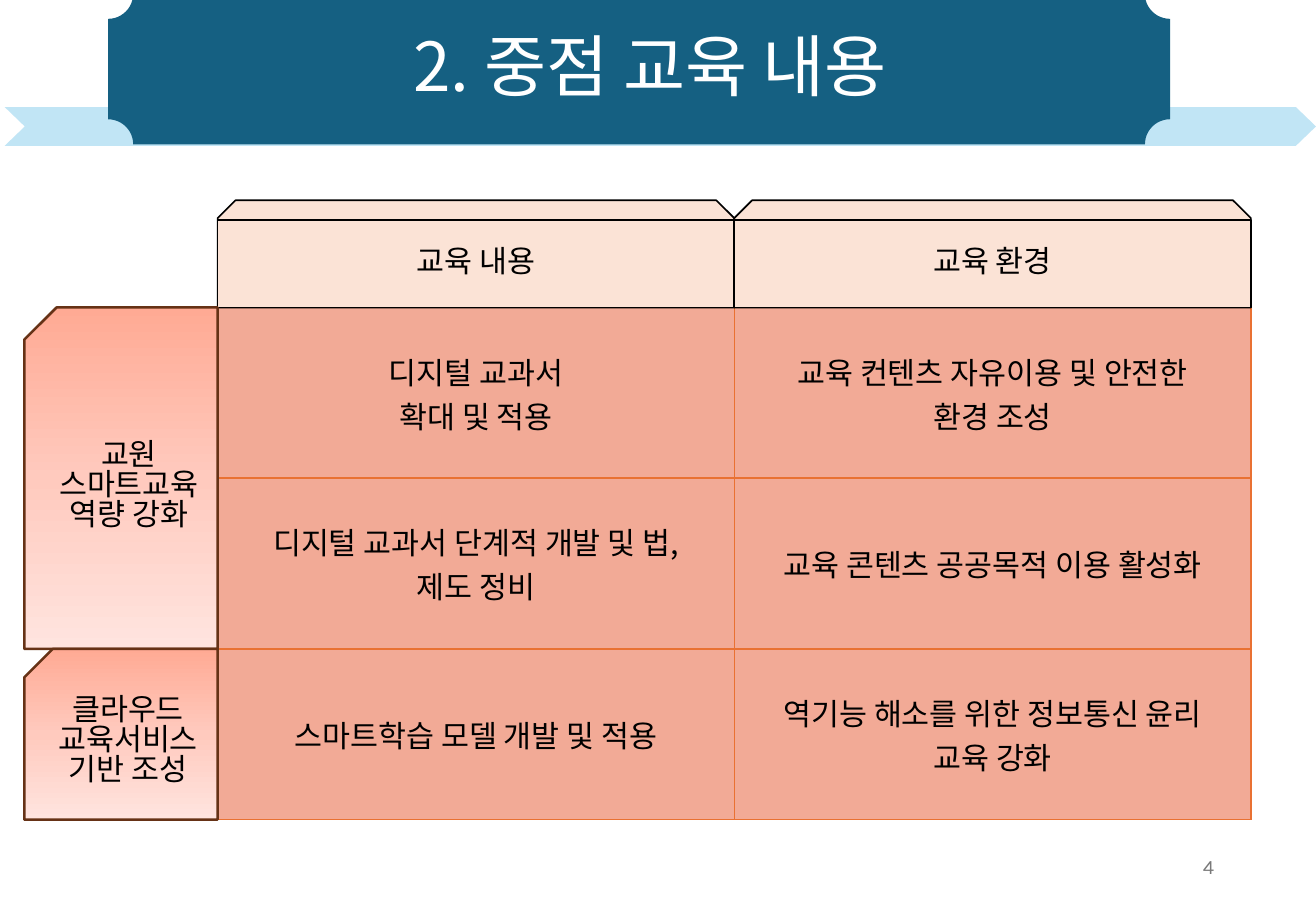
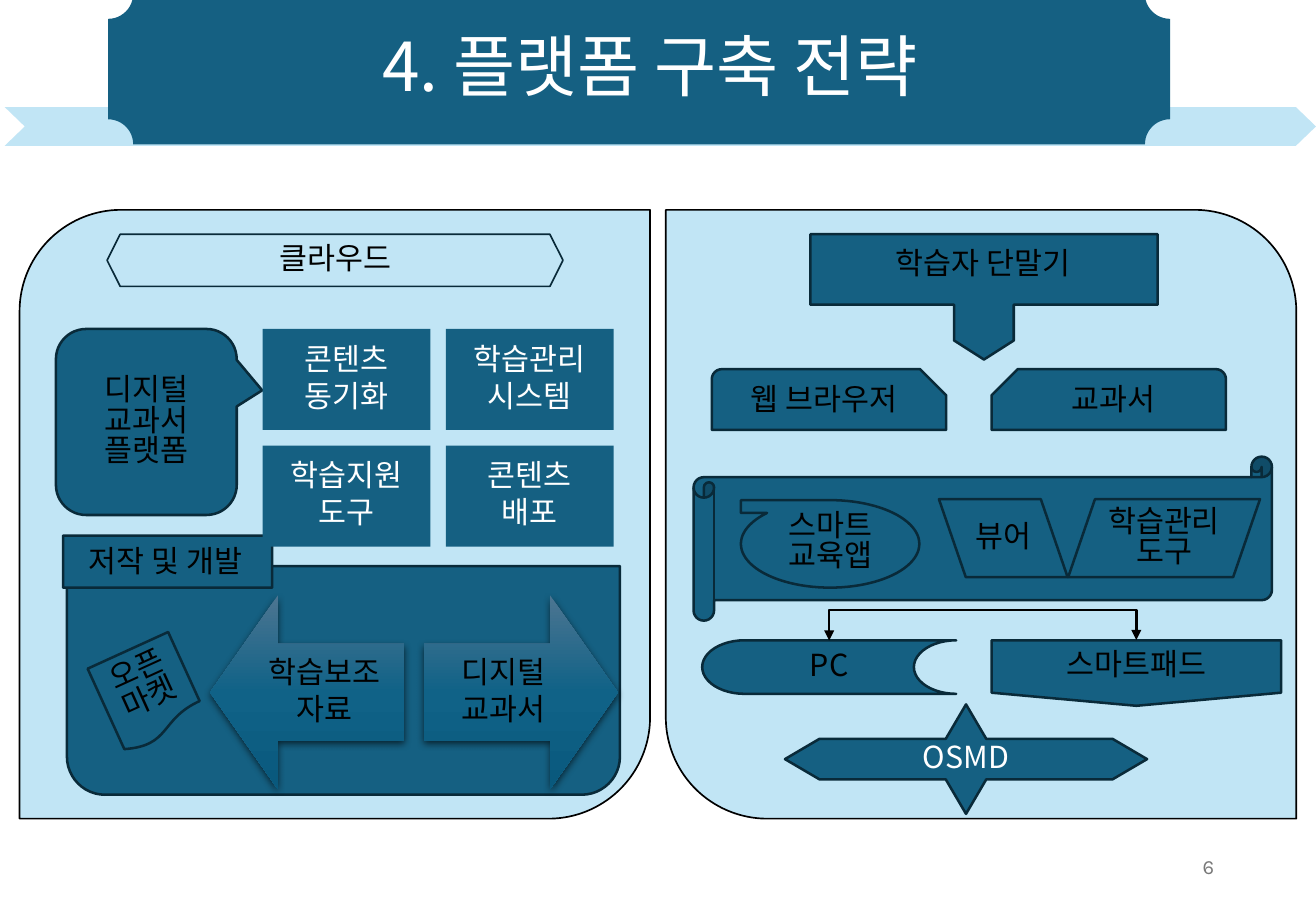
from copy import deepcopy

from lxml import etree
from pptx import Presentation
from pptx.dml.color import RGBColor
from pptx.enum import shapes, text
from pptx.oxml.ns import qn
from pptx.util import Cm, Pt

NAVY = RGBColor(0x15, 0x60, 0x82)
SKY = RGBColor(0xC1, 0xE5, 0xF5)
EDGE = RGBColor(0x09, 0x2A, 0x39)
WHITE = RGBColor(0xFF, 0xFF, 0xFF)
BLACK = RGBColor(0x00, 0x00, 0x00)
GREY = RGBColor(0x79, 0x79, 0x79)
PEACH = RGBColor(0xFB, 0xE3, 0xD6)
CORAL = RGBColor(0xF2, 0xAA, 0x96)
BROWN = RGBColor(0x66, 0x32, 0x16)
ORANGE = RGBColor(0xE9, 0x71, 0x32)
BLUSH = [RGBColor.from_string(c) for c in ("FFAA94", "FFCABE", "FFE4DF")]
STEEL = [RGBColor.from_string(c) for c in ("4C7591", "106287", "09597D")]
KIND = shapes.MSO_SHAPE
MID = text.MSO_ANCHOR.MIDDLE
TOP = text.MSO_ANCHOR.TOP
ALIGN = text.PP_ALIGN


def add(node, tag, **attrs):
    return etree.SubElement(node, qn(tag), attrs)


class Deck:
    font = "Noto Sans CJK KR"
    size = 18
    pitch = 0.83

    def __init__(self):
        self.prs = Presentation()
        self.prs.slide_width, self.prs.slide_height = Cm(27.51), Cm(19.05)
        self.base = self.prs.slide_layouts[5]
        self.slide = self.on = None

    def page(self, title, num):
        first = self.slide is None
        self.slide = self.prs.slides.add_slide(self.base)
        self.on = self.slide.shapes
        if first:
            self.bands()
        head = self.on.title
        self.place(head, 1.73, -0.38, 23.72, 3.68)
        self.letter(head.text_frame, title, WHITE, size=40, pitch=0.9)
        self.label(num, 19.43, 17.65, 6.2, 1.02, GREY, size=12,
                   font="Karla", align=ALIGN.RIGHT, anchor=MID)

    def bands(self):
        strip = self.shape(KIND.NOTCHED_RIGHT_ARROW, 0.1, 2.24, 27.41, 0.81,
                           SKY, adj=(1, 0.518))
        plate = self.shape(KIND.PLAQUE, 2.26, -0.13, 22.2, 3.15)
        tree = self.base.shapes.element
        for spot, band in enumerate((strip, plate), 2):
            tree.insert(spot, band.element)

    def group(self):
        self.on = self.slide.shapes.add_group_shape().shapes

    def place(self, item, x, y, w, h):
        item.left, item.top, item.width, item.height = map(Cm, (x, y, w, h))

    def letter(self, frame, words, color=BLACK, size=size, font=font,
               align=ALIGN.CENTER, anchor=MID, pitch=pitch, after=0,
               inset=None, wrap=True):
        frame.text = words
        frame.word_wrap = wrap
        frame.vertical_anchor = anchor
        if inset is not None:
            frame.margin_left = frame.margin_right = Cm(inset)
            frame.margin_top = frame.margin_bottom = Cm(inset)
        self.style(frame, color, size, font, align, pitch, after)

    def style(self, frame, color, size, font, align, pitch, after=0):
        for para in frame.paragraphs:
            para.alignment = align
            para.line_spacing = pitch
            para.space_after = Pt(after)
            for run in para.runs:
                run.font.size = Pt(size)
                run.font.name = font
                run.font.color.rgb = color
                add(run.font._element, "a:ea", typeface=font)

    def label(self, words, x, y, w, h, color=BLACK, anchor=TOP, **look):
        box = self.on.add_textbox(Cm(x), Cm(y), Cm(w), Cm(h))
        self.letter(box.text_frame, words, color, anchor=anchor, **look)

    def shape(self, kind, x, y, w, h, fill=NAVY, line=None, wide=1.5,
              words="", adj=(), flip="", turn=0, **look):
        item = self.on.add_shape(kind, Cm(x), Cm(y), Cm(w), Cm(h))
        item.shadow.inherit = False
        for i, value in enumerate(adj):
            item.adjustments[i] = value
        for way in flip:
            item.element.spPr.xfrm.set("flip" + way, "1")
        item.rotation = turn
        if isinstance(fill, list):
            self.blend(item.fill, fill)
        else:
            item.fill.solid()
            item.fill.fore_color.rgb = fill
        if line is None:
            item.line.fill.background()
        else:
            item.line.color.rgb = line
            item.line.width = Pt(wide)
        if words:
            self.letter(item.text_frame, words, **look)
        return item

    def edged(self, kind, *at, **more):
        return self.shape(kind, *at, line=EDGE, **more)

    def blend(self, fill, tones):
        fill.gradient()
        fill.gradient_angle = 270
        first = fill.gradient_stops[0]._gs
        first.addnext(deepcopy(first))
        for i, (stop, tone) in enumerate(zip(fill.gradient_stops, tones)):
            stop.position = i / 2
            stop.color.rgb = tone

    def shade(self, item):
        glow = add(item.element.spPr.find(qn("a:effectLst")), "a:outerShdw",
                   blurRad="57150", dist="19050", dir="5400000",
                   algn="ctr", rotWithShape="0")
        add(add(glow, "a:srgbClr", val="000000"), "a:alpha", val="63000")

    def table(self, rows, x, y, w, h):
        wide, high = len(rows[0]), len(rows)
        grid = self.on.add_table(high, wide, Cm(x), Cm(y),
                                 Cm(w * wide), Cm(h * high)).table
        grid.first_row = grid.horz_banding = False
        for r, row in enumerate(rows):
            grid.rows[r].height = Cm(h)
            for c, words in enumerate(row):
                grid.columns[c].width = Cm(w)
                cell = grid.cell(r, c)
                cell.text_frame.text = words
                cell.vertical_anchor = MID
                self.style(cell.text_frame, BLACK, self.size, self.font,
                           ALIGN.CENTER, 1.0)
                self.rule(cell)
                cell.fill.solid()
                cell.fill.fore_color.rgb = CORAL

    def rule(self, cell):
        props = cell._tc.get_or_add_tcPr()
        for side in "LRTB":
            edge = add(props, "a:ln" + side, w="12700")
            add(add(edge, "a:solidFill"), "a:srgbClr", val=str(ORANGE))

    def bridge(self, start, end, rise):
        link = self.on.add_connector(shapes.MSO_CONNECTOR.ELBOW, start.left,
                                     start.top, end.left, end.top)
        link.begin_connect(start, 0)
        link.end_connect(end, 0)
        a = start.left + start.width // 2
        b = end.left + end.width // 2
        thin = Cm(0.01)
        link.left, link.top = (a + b - thin) // 2, start.top - (b - a) // 2
        link.width, link.height = thin, b - a
        props = link._element.spPr
        for key, value in (("rot", "5400000"), ("flipH", "1"), ("flipV", "1")):
            props.xfrm.set(key, value)
        bend = round(Cm(rise) / thin * 100000)
        add(props.find(".//" + qn("a:avLst")), "a:gd", name="adj1",
            fmla=f"val {bend}")
        link.line.color.rgb = BLACK
        link.line.width = Pt(1.5)
        for tip in ("a:headEnd", "a:tailEnd"):
            add(link.line._get_or_add_ln(), tip, type="triangle")
        add(props, "a:effectLst")


def focus(deck):
    deck.page("2. 중점 교육 내용", "4")
    x, y, w, h = 4.55, 6.43, 10.8, 3.57
    deck.table([
        ("디지털 교과서\n확대 및 적용", "교육 컨텐츠 자유이용 및 안전한\n환경 조성"),
        ("디지털 교과서 단계적 개발 및 법,\n제도 정비", "교육 콘텐츠 공공목적 이용 활성화"),
        ("스마트학습 모델 개발 및 적용", "역기능 해소를 위한 정보통신 윤리\n교육 강화"),
    ], x, y, w, h)
    for i, words in enumerate(("교육 내용", "교육 환경")):
        left = x + i * w
        deck.shape(KIND.SNIP_2_SAME_RECTANGLE, left, y - 2.24, w, 2.24,
                   PEACH, BLACK, 1)
        deck.shape(KIND.RECTANGLE, left, y - 1.83, w, 1.83,
                   PEACH, BLACK, 1, words)
    for row, span, words in ((0, 2, "교원\n스마트교육\n역량 강화"),
                             (2, 1, "클라우드\n교육서비스\n기반 조성")):
        deck.shape(KIND.SNIP_1_RECTANGLE, 0.51, y + row * h, x - 0.51,
                   span * h, BLUSH, BROWN, words=words, flip="H")


def cloud(deck):
    deck.group()
    deck.shape(KIND.ROUND_2_DIAG_RECTANGLE, 0.41, 4.39, 13.18, 12.73,
               SKY, BLACK, 1)
    deck.edged(KIND.HEXAGON, 2.24, 4.9, 9.53, 1.09, fill=SKY, wide=1,
               words="클라우드")
    deck.edged(KIND.ROUNDED_RECTANGULAR_CALLOUT, 1.17, 6.88, 3.78, 3.89,
               adj=(0.641, -0.17, 0.167), words="디지털\n교과서\n플랫폼")
    deck.edged(KIND.ROUND_2_SAME_RECTANGLE, 1.4, 11.84, 11.56, 4.78, flip="V")
    deck.edged(KIND.SNIP_1_RECTANGLE, 1.32, 11.2, 4.37, 1.09,
               words="저작 및 개발")
    deck.edged(KIND.FLOWCHART_DOCUMENT, 2.16, 13.51, 1.85, 1.98, turn=335.5,
               words="오픈\n마켓")
    for kind, x, words in ((KIND.LEFT_ARROW, 4.39, "학습보조\n자료"),
                           (KIND.RIGHT_ARROW, 8.86, "디지털\n교과서")):
        deck.shade(deck.shape(kind, x, 12.45, 4.06, 4.06, STEEL, words=words,
                              adj=(0.5, 0.35), inset=0.36, after=4))
    tiles = ("콘텐츠\n동기화", "학습관리\n시스템", "학습지원\n도구", "콘텐츠\n배포")
    for i, words in enumerate(tiles):
        row, col = divmod(i, 2)
        deck.shape(KIND.RECTANGLE, 5.49 + col * 3.83, 6.88 + row * 2.44,
                   3.51, 2.11, words=words, color=WHITE, inset=0.18, after=4)


def device(deck):
    deck.group()
    deck.shape(KIND.ROUND_2_DIAG_RECTANGLE, 13.92, 4.39, 13.18, 12.73,
               SKY, BLACK, 1, flip="H")
    deck.edged(KIND.UP_ARROW_CALLOUT, 16.94, 4.9, 7.26, 2.62, flip="V",
               adj=(0.5, 0.238, 0.152, 0.562))
    deck.label("학습자 단말기", 17.58, 5.11, 5.94, 1.8)
    for x, flip, words in ((14.88, "", "웹 브라우저"), (20.73, "H", "교과서")):
        deck.edged(KIND.SNIP_ROUND_RECTANGLE, x, 7.72, 4.9, 1.27, flip=flip,
                   adj=(0.167, 0.431), words=words)
    deck.edged(KIND.HORIZONTAL_SCROLL, 14.5, 9.55, 12.09, 3.43)
    deck.edged(KIND.FLOWCHART_SEQUENTIAL_ACCESS_STORAGE, 15.49, 10.46, 3.73,
               1.83, flip="HV")
    deck.label("스마트\n교육앱", 15.8, 10.59, 3.12, 1.8)
    for x, w, flip, words in ((22.33, 4.01, "", "학습관리\n도구"),
                              (19.63, 2.69, "H", "뷰어")):
        deck.edged(KIND.PARALLELOGRAM, x, 10.44, w, 1.63, flip=flip,
                   adj=(0.344,), words=words, wrap=False)
    desk = deck.edged(KIND.FLOWCHART_STORED_DATA, 14.68, 13.39, 5.31, 1.12,
                      words="PC")
    pad = deck.edged(KIND.FLOWCHART_OFFPAGE_CONNECTOR, 20.73, 13.39, 6.05,
                     1.37, words="스마트패드")
    deck.bridge(desk, pad, 0.64)
    deck.edged(KIND.QUAD_ARROW_CALLOUT, 16.41, 14.73, 7.57, 2.29,
               adj=(0.37, 0.185, 0.315, 0.292), words="OSMD", color=WHITE,
               wrap=False)


def main():
    deck = Deck()
    focus(deck)
    deck.page("4. 플랫폼 구축 전략", "6")
    cloud(deck)
    device(deck)
    deck.prs.save("out.pptx")


if __name__ == "__main__":
    main()
